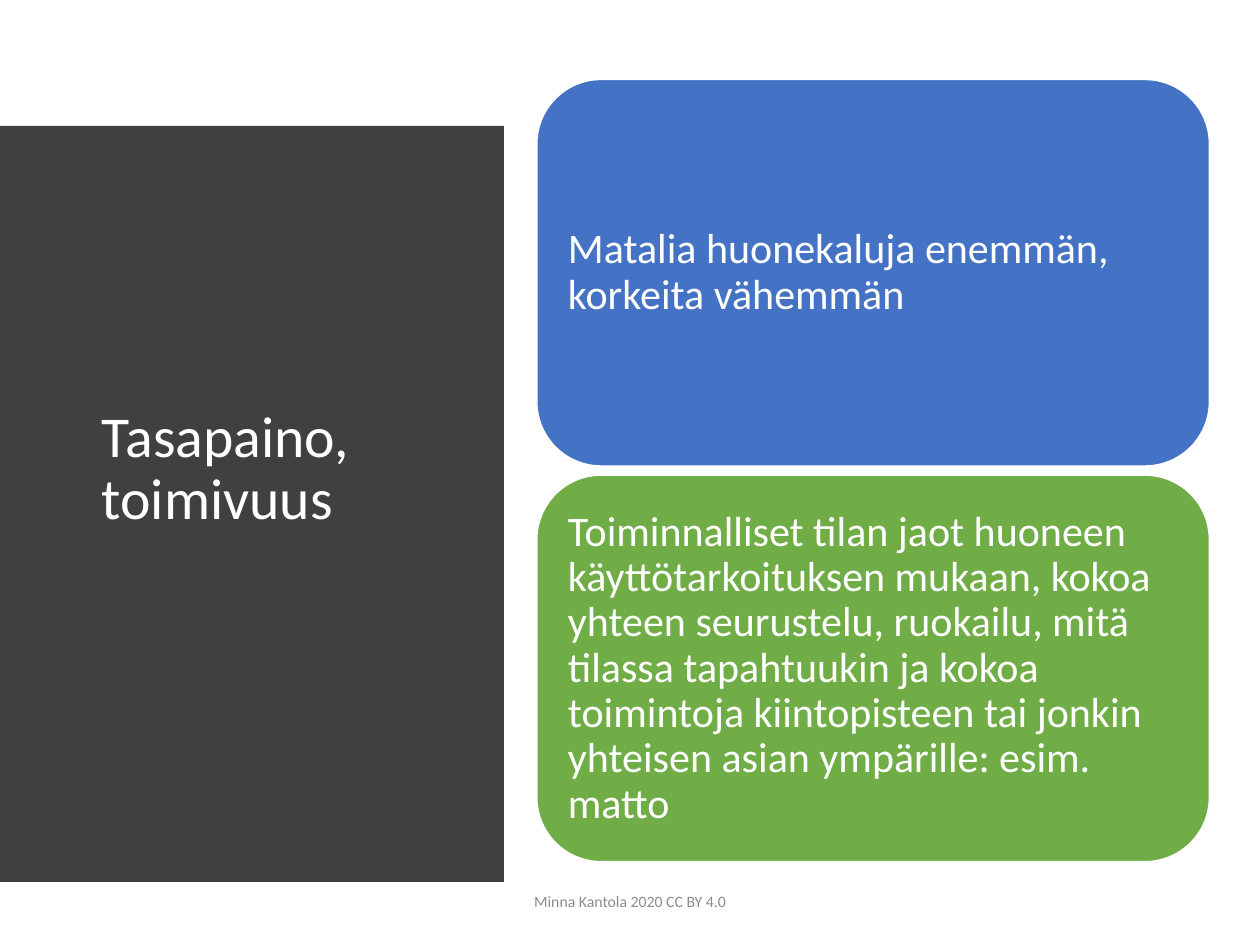
from pptx import Presentation
from pptx.dml.color import RGBColor
from pptx.enum.shapes import MSO_SHAPE
from pptx.enum.text import MSO_ANCHOR, PP_ALIGN
from pptx.util import Inches, Pt

WHITE = RGBColor(0xFF, 0xFF, 0xFF)
CHARCOAL = RGBColor(0x40, 0x40, 0x40)
BLUE = RGBColor(0x44, 0x72, 0xC4)
GREEN = RGBColor(0x70, 0xAD, 0x47)
GREY = RGBColor(0x8C, 0x8C, 0x8C)

TITLE = "Tasapaino, toimivuus"
CARDS = [
    ("Matalia huonekaluja enemmän, korkeita vähemmän", BLUE),
    ("Toiminnalliset tilan jaot huoneen käyttötarkoituksen mukaan, kokoa yhteen "
     "seurustelu, ruokailu, mitä tilassa tapahtuukin ja kokoa toimintoja "
     "kiintopisteen tai jonkin yhteisen asian ympärille: esim. matto", GREEN),
]
FOOTER = "Minna Kantola 2020 CC BY 4.0"


def write(holder, text, size, color, align=PP_ALIGN.LEFT, line_spacing=1.0):
    frame = holder.text_frame
    frame.word_wrap = True
    frame.vertical_anchor = MSO_ANCHOR.MIDDLE
    paragraph = frame.paragraphs[0]
    paragraph.alignment = align
    paragraph.line_spacing = line_spacing
    run = paragraph.add_run()
    run.text = text
    run.font.name = "Calibri"
    run.font.size = Pt(size)
    run.font.color.rgb = color
    return frame


def add_title_panel(slide, left, top, width, height):
    bulge, steps = 0.18, 40
    edge = left + width - bulge
    curve = []
    for step in range(1, steps + 1):
        progress = step / steps
        offset = 2 * progress - 1
        curve.append((edge + bulge * (1 - offset ** 2), top + height * progress))
    builder = slide.shapes.build_freeform(left, top, scale=Inches(1))
    builder.add_line_segments([(edge, top), *curve, (left, top + height)], close=True)
    panel = builder.convert_to_shape()
    panel.shadow.inherit = False
    panel.fill.solid()
    panel.fill.fore_color.rgb = CHARCOAL
    panel.line.fill.background()

    heading = slide.shapes.add_textbox(
        Inches(left + 0.31), Inches(top + 0.59), Inches(2.8), Inches(height - 1.2))
    write(heading, TITLE, 33, WHITE, line_spacing=0.9)


def add_cards(slide, left, top, width, height):
    gap = 0.07
    card_height = (height - gap * (len(CARDS) - 1)) / len(CARDS)
    for index, (advice, color) in enumerate(CARDS):
        card = slide.shapes.add_shape(
            MSO_SHAPE.ROUNDED_RECTANGLE, Inches(left),
            Inches(top + index * (card_height + gap)), Inches(width), Inches(card_height))
        card.shadow.inherit = False
        card.fill.solid()
        card.fill.fore_color.rgb = color
        card.line.color.rgb = WHITE
        card.line.width = Pt(1)
        frame = write(card, advice, 24, WHITE, line_spacing=0.9)
        frame.margin_left = frame.margin_right = Inches(0.1)
        frame.margin_top = frame.margin_bottom = Inches(0.1)


def add_footer(slide, left, top, width, height):
    footer = slide.shapes.add_textbox(
        Inches(left), Inches(top), Inches(width), Inches(height))
    write(footer, FOOTER, 9, GREY, PP_ALIGN.CENTER)


def main():
    presentation = Presentation()
    presentation.slide_width = Inches(10)
    presentation.slide_height = Inches(7.5)
    slide = presentation.slides.add_slide(presentation.slide_layouts[6])
    add_title_panel(slide, 0.4, 0.52, 3.59, 6.44)
    add_cards(slide, 4.26, 0.63, 5.34, 6.21)
    add_footer(slide, 3.31, 6.95, 3.38, 0.4)
    presentation.save("out.pptx")


if __name__ == "__main__":
    main()
